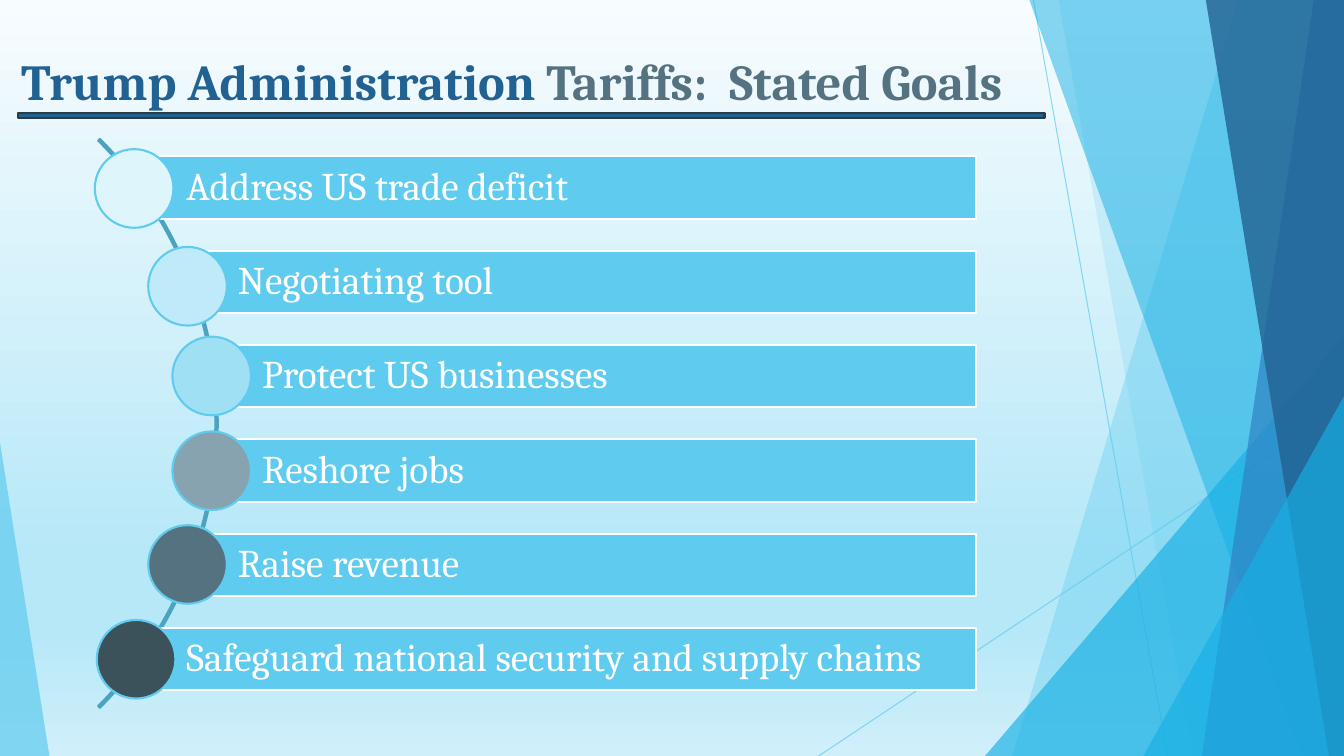
from dataclasses import dataclass

from lxml import etree
from pptx import Presentation
from pptx.dml.color import RGBColor
from pptx.enum import shapes, text
from pptx.oxml.ns import qn
from pptx.util import Inches, Pt


@dataclass(frozen=True)
class Theme:
    font: str = "Cambria"
    title_size: int = 36
    goal_size: int = 28
    outline: float = 1.5
    hairline: float = 0.75
    white: str = "FFFFFF"
    sky: str = "5FCBEF"
    azure: str = "17B0E4"
    blue: str = "2E83C3"
    navy: str = "226292"
    slate: str = "54727F"
    ink: str = "2C3C43"
    arc: str = "4CA3BF"
    backdrop: tuple = ((0, "F7FCFE"), (74, "B7E8F8"), (83, "B7E8F8"), (100, "CFEFFA"))


T = Theme()
KIND = shapes.MSO_SHAPE
WIDTH, HEIGHT = 13.33, 7.5

# Goal, bar left, circle left and top, circle colour
GOALS = [
    ("Address US trade deficit", 1.35, 0.94, 1.48, "DFF5FC"),
    ("Negotiating tool", 1.86, 1.47, 2.45, "BFEAF9"),
    ("Protect US businesses", 2.1, 1.71, 3.34, "9FE0F5"),
    ("Reshore jobs", 2.1, 1.71, 4.28, "87A3B0"),
    ("Raise revenue", 1.86, 1.47, 5.21, T.slate),
    ("Safeguard national security and supply chains", 1.35, 0.96, 6.15, "3C525B"),
]


def rgb(value):
    return RGBColor.from_string(value)


def set_alpha(element, percent):
    for color in element.iter(qn("a:srgbClr")):
        etree.SubElement(color, qn("a:alpha"), val=str(percent * 1000))


def style(sp, fill=None, line=None, alpha=None):
    sp.shadow.inherit = False
    if fill:
        sp.fill.solid()
        sp.fill.fore_color.rgb = rgb(fill)
    else:
        sp.fill.background()
    if line:
        sp.line.color.rgb = rgb(line)
        sp.line.width = Pt(T.outline)
    else:
        sp.line.fill.background()
    if alpha:
        set_alpha(sp._element.spPr, alpha)
    return sp


def add_shape(s, kind, box, adjustments=(), **look):
    sp = s.shapes.add_shape(kind, *map(Inches, box))
    for i, value in enumerate(adjustments):
        sp.adjustments[i] = value
    return style(sp, **look)


def format_run(r, size, color, bold=False):
    r.font.name = T.font
    r.font.size = Pt(size)
    r.font.bold = bold
    r.font.color.rgb = rgb(color)


def add_background(s):
    fill = s.background.fill
    fill.gradient()
    fill.gradient_angle = 270
    stops = s.element.find(".//" + qn("a:gsLst"))
    for stop in list(stops):
        stops.remove(stop)
    for position, color in T.backdrop:
        stop = etree.SubElement(stops, qn("a:gs"), pos=str(position * 1000))
        etree.SubElement(stop, qn("a:srgbClr"), val=color)


def add_hairline(s, *ends):
    line = s.shapes.add_connector(shapes.MSO_CONNECTOR.STRAIGHT, *map(Inches, ends))
    line.line.color.rgb = rgb(T.sky)
    line.line.width = Pt(T.hairline)
    set_alpha(line._element.spPr, 70)
    etree.SubElement(line._element.spPr, qn("a:effectLst"))


def add_facet(s, top_left, top_right, bottom_right, bottom_left, color, alpha):
    """Translucent panel over the full slide height, given by its corners' x."""
    builder = s.shapes.build_freeform(Inches(top_left), 0)
    corners = [(top_right, 0), (bottom_right, HEIGHT), (bottom_left, HEIGHT)]
    builder.add_line_segments([(Inches(x), Inches(y)) for x, y in corners])
    style(builder.convert_to_shape(), fill=color, alpha=alpha)


def add_corner(s, left, top, right, apex, color, alpha):
    """Translucent triangle on the slide's bottom edge; apex 0 left, 1 right."""
    add_shape(s, KIND.ISOSCELES_TRIANGLE, (left, top, right - left, HEIGHT - top),
              [apex], fill=color, alpha=alpha)


def add_facets(s):
    add_hairline(s, 10.25, 0, 11.58, HEIGHT)
    add_hairline(s, WIDTH, 4.03, 8.12, HEIGHT)
    add_facet(s, 12.28, WIDTH, WIDTH, 10.04, T.sky, 36)
    add_facet(s, 10.5, WIDTH, WIDTH, 11.83, T.sky, 20)
    add_corner(s, 9.77, 3.33, WIDTH, 1, T.azure, 66)
    add_facet(s, 10.21, WIDTH, WIDTH, 12.91, T.azure, 50)
    add_facet(s, 13.03, WIDTH, WIDTH, 11.92, T.blue, 70)
    add_facet(s, 11.96, WIDTH, WIDTH, 13.18, T.navy, 80)
    add_corner(s, 11.34, 3.93, WIDTH, 1, T.azure, 66)
    add_corner(s, 0, 4.39, 0.49, 0, T.sky, 70)


def add_title(s, left, top, width, height):
    title = s.shapes.title
    title.left, title.top = Inches(left), Inches(top)
    title.width, title.height = Inches(width), Inches(height)
    tf = title.text_frame
    tf.word_wrap = True
    tf.auto_size = text.MSO_AUTO_SIZE.NONE
    tf.vertical_anchor = text.MSO_ANCHOR.TOP
    p = tf.paragraphs[0]
    p.alignment = text.PP_ALIGN.LEFT
    for words, color in (("Trump Administration ", T.navy),
                         ("Tariffs:  Stated Goals", T.slate)):
        r = p.add_run()
        r.text = words
        format_run(r, T.title_size, color, bold=True)
    add_shape(s, KIND.RECTANGLE, (left + 0.07, top + 0.67, 10.18, 0.05),
              fill=T.navy, line=T.ink)


def add_bar(s, box, words):
    bar = add_shape(s, KIND.RECTANGLE, box, fill=T.sky, line=T.white)
    tf = bar.text_frame
    tf.word_wrap = True
    tf.vertical_anchor = text.MSO_ANCHOR.MIDDLE
    tf.margin_left = Inches(0.5)
    tf.margin_top = tf.margin_right = tf.margin_bottom = Inches(0.08)
    tf.text = words
    p = tf.paragraphs[0]
    p.alignment = text.PP_ALIGN.LEFT
    p.line_spacing = 0.9
    format_run(p.runs[0], T.goal_size, T.white)


def add_goals(s, top, right, bottom):
    """Bars spread evenly from top to bottom, with circles along an arc."""
    bar_height, circle, radius = 0.62, 0.78, 3.99
    pitch = (bottom - top - bar_height) / (len(GOALS) - 1)
    arc_top = (top + bottom) / 2 - radius
    add_shape(s, KIND.BLOCK_ARC, (-5.82, arc_top, 2 * radius, 2 * radius),
              [189, 27, 0.003], line=T.arc)
    for i, (goal, left, circle_left, circle_top, color) in enumerate(GOALS):
        add_bar(s, (left, top + i * pitch, right - left, bar_height), goal)
        add_shape(s, KIND.OVAL, (circle_left, circle_top, circle, circle),
                  fill=color, line=T.sky)


def main():
    prs = Presentation()
    prs.slide_width, prs.slide_height = Inches(WIDTH), Inches(HEIGHT)
    s = prs.slides.add_slide(prs.slide_layouts[5])
    add_background(s)
    add_facets(s)
    add_title(s, 0.11, 0.45, 10.42, 1.44)
    add_goals(s, 1.55, 9.68, 6.85)
    prs.save("out.pptx")


if __name__ == "__main__":
    main()
